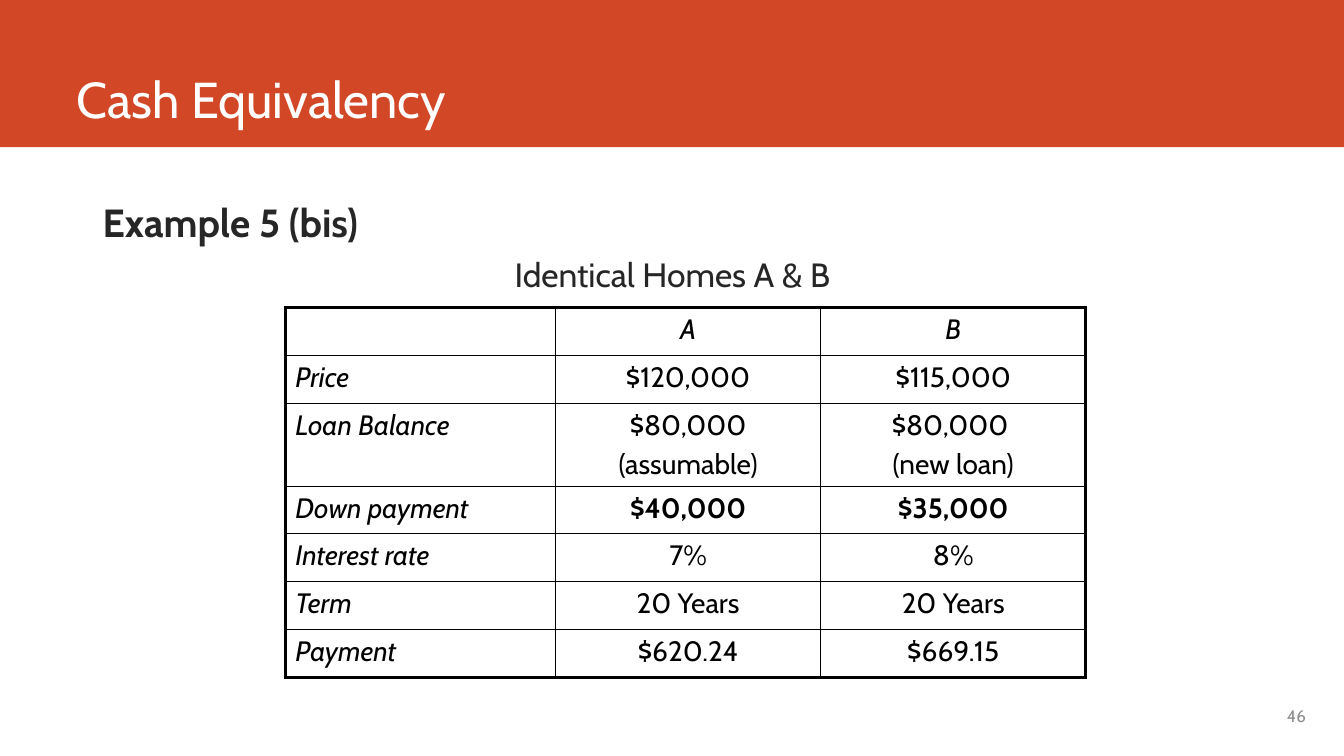
from lxml import etree
from pptx import Presentation
from pptx import util as u
from pptx.dml.color import RGBColor
from pptx.enum import shapes, text
from pptx.oxml.ns import qn

FONT = "Cabin"
BLACK = "000000"
LEFT, CENTER, RIGHT = text.PP_ALIGN.LEFT, text.PP_ALIGN.CENTER, text.PP_ALIGN.RIGHT
COLUMN_WIDTHS = [2.68, 2.63, 2.63]
ROW_HEIGHTS = [0.48, 0.47, 0.81, 0.47, 0.48, 0.47, 0.48]
HOMES = [
    ["", "A", "B"],
    ["Price", "$120,000", "$115,000"],
    ["Loan Balance", "$80,000\n(assumable)", "$80,000 \n(new loan)"],
    ["Down payment", "$40,000", "$35,000"],
    ["Interest rate", "7%", "8%"],
    ["Term", "20 Years", "20 Years"],
    ["Payment", "$620.24", "$669.15"],
]


def color(value):
    return RGBColor.from_string(value)


def style(para, size, hue, align=LEFT, bold=False, italic=False, before=0, after=0):
    para.alignment = align
    para.space_before, para.space_after = u.Pt(before), u.Pt(after)
    font = para.font
    font.name, font.size, font.bold, font.italic = FONT, u.Pt(size), bold, italic
    font.color.rgb = color(hue)


def add_text(page, left, top, width, height, content, anchor=text.MSO_ANCHOR.TOP):
    """Add a text box; content is a list of (words, style options)."""
    box = page.shapes.add_textbox(*map(u.Inches, (left, top, width, height)))
    frame = box.text_frame
    frame.word_wrap = True
    frame.vertical_anchor = anchor
    frame.text = "\n".join(words for words, _ in content)
    for para, (_, options) in zip(frame.paragraphs, content):
        style(para, **options)


def add_band(page, width, height, hue):
    band = page.shapes.add_shape(
        shapes.MSO_SHAPE.RECTANGLE, 0, 0, width, u.Inches(height))
    band.shadow.inherit = False
    band.fill.solid()
    band.fill.fore_color.rgb = color(hue)
    band.line.fill.background()


def set_borders(cell, thick_sides):
    properties = cell._tc.get_or_add_tcPr()
    for side in "LRTB":
        points = 2.25 if side in thick_sides else 1
        line = etree.SubElement(properties, qn(f"a:ln{side}"), w=str(u.Pt(points)))
        fill = etree.SubElement(line, qn("a:solidFill"))
        etree.SubElement(fill, qn("a:srgbClr"), val=BLACK)


def add_homes_table(page, left, top):
    last_row, last_column = len(HOMES) - 1, len(COLUMN_WIDTHS) - 1
    table = page.shapes.add_table(
        len(HOMES), len(COLUMN_WIDTHS), u.Inches(left), u.Inches(top),
        u.Inches(sum(COLUMN_WIDTHS)), u.Inches(sum(ROW_HEIGHTS))).table
    table.first_row = table.horz_banding = False
    for column, width in zip(table.columns, COLUMN_WIDTHS):
        column.width = u.Inches(width)
    for r, (values, height) in enumerate(zip(HOMES, ROW_HEIGHTS)):
        table.rows[r].height = u.Inches(height)
        for c, value in enumerate(values):
            cell = table.cell(r, c)
            cell.text = value
            for para in cell.text_frame.paragraphs:
                style(para, 20, BLACK, CENTER if c else LEFT, before=4,
                      bold=c > 0 and values[0] == "Down payment",
                      italic=r == 0 or c == 0)
            # Thick lines only around the outside
            outside = {"L": c == 0, "R": c == last_column,
                       "T": r == 0, "B": r == last_row}
            set_borders(cell, [side for side, edge in outside.items() if edge])
            cell.fill.background()


def main():
    deck = Presentation()
    deck.slide_width, deck.slide_height = u.Inches(13.33), u.Inches(7.5)
    page = deck.slides.add_slide(deck.slide_layouts[6])

    # Title band
    add_band(page, deck.slide_width, 1.46, "D24726")
    add_text(page, 0.66, 0, 11.76, 1.32,
             [("Cash Equivalency", dict(size=36, hue="FFFFFF"))],
             text.MSO_ANCHOR.BOTTOM)

    # Example heading and table caption
    add_text(page, 0.92, 1.92, 11.5, 1.1, [
        ("Example 5 (bis)", dict(size=28, hue="262626", bold=True, before=6, after=6)),
        ("Identical Homes A & B", dict(size=24, hue="262626", align=CENTER, after=6)),
    ])

    # Comparison of the two homes
    add_homes_table(page, 2.83, 3.05)

    # Page number
    add_text(page, 9.47, 6.9, 3.58, 0.4,
             [("46", dict(size=12, hue="8C8C8C", align=RIGHT))],
             text.MSO_ANCHOR.MIDDLE)

    deck.save("out.pptx")


if __name__ == "__main__":
    main()
